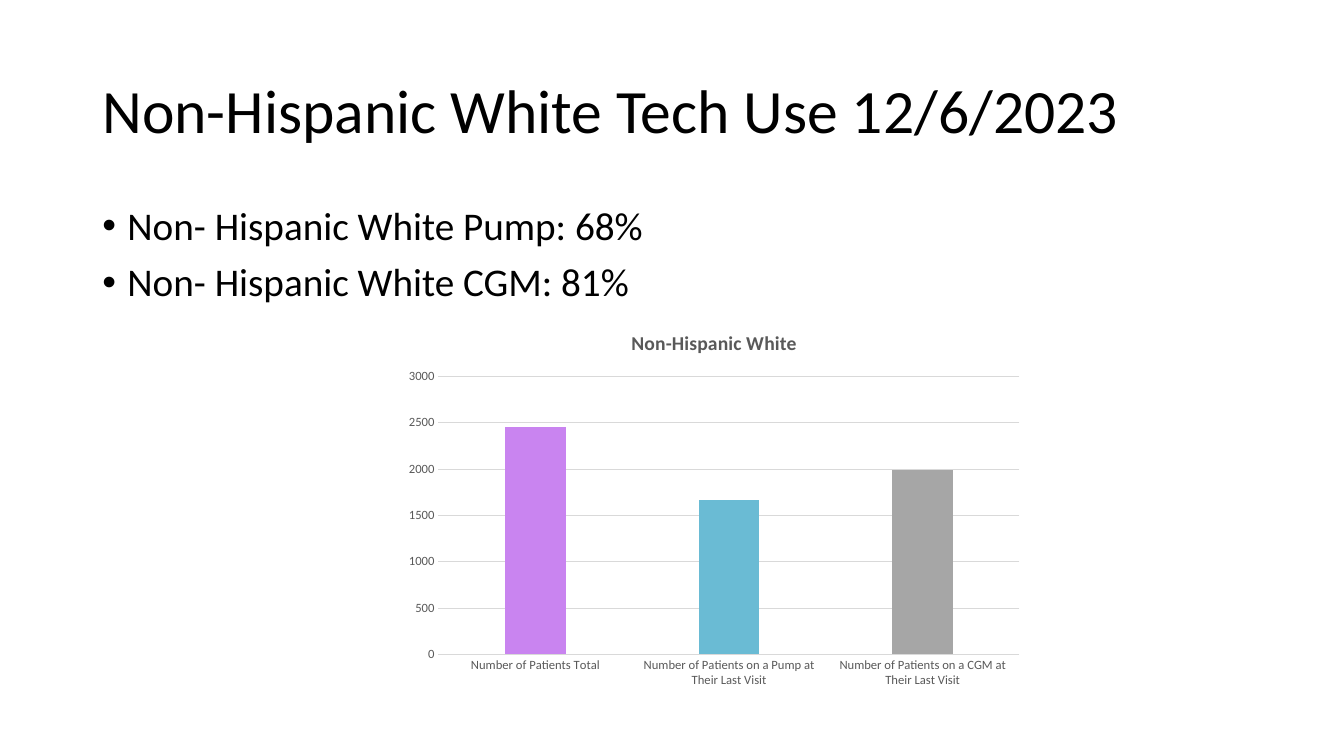
"""Build the slide on Non-Hispanic White tech use."""
from lxml import etree
from pptx import Presentation
from pptx.chart.data import CategoryChartData
from pptx.dml.color import RGBColor
from pptx.enum.chart import XL_CHART_TYPE, XL_TICK_MARK
from pptx.enum.text import MSO_ANCHOR, MSO_AUTO_SIZE, PP_ALIGN
from pptx.oxml.ns import qn
from pptx.util import Pt

COLUMN = XL_CHART_TYPE.COLUMN_CLUSTERED
NO_TICK = XL_TICK_MARK.NONE
MIDDLE = MSO_ANCHOR.MIDDLE
NO_FIT = MSO_AUTO_SIZE.NONE
LEFT = PP_ALIGN.LEFT
FACE = "Calibri"
COLORS = {
    "text": "000000", "label": "595959", "grid": "D9D9D9",
    "total": "C984F0", "pump": "6ABBD4", "cgm": "A6A6A6",
}


def shade(name):
    return RGBColor.from_string(COLORS[name])


def style(font, size, color, bold=False):
    font.name = FACE
    font.size = Pt(size)
    font.bold = bold
    font.color.rgb = shade(color)


deck = Presentation()
deck.slide_width, deck.slide_height = Pt(960), Pt(540)
slide = deck.slides.add_slide(deck.slide_layouts[5])

title = slide.shapes.title
title.left, title.top, title.width, title.height = Pt(66), Pt(28.8), Pt(828), Pt(104.4)
frame = title.text_frame
frame.text = "Non-Hispanic White Tech Use 12/6/2023"
frame.auto_size = NO_FIT
frame.vertical_anchor = MIDDLE
head = frame.paragraphs[0]
head.alignment = LEFT
head.line_spacing = 0.9
style(head.runs[0].font, 44, "text")

body = slide.shapes.add_textbox(Pt(66), Pt(144), Pt(828), Pt(342.7)).text_frame
body.word_wrap = True
body.text = "Non- Hispanic White Pump: 68%\nNon- Hispanic White CGM: 81%"
for para in body.paragraphs:
    para.line_spacing = 0.9
    para.space_before = Pt(10)
    style(para.runs[0].font, 28, "text")
    props = para._p.get_or_add_pPr()
    props.set("marL", str(Pt(18)))
    props.set("indent", str(Pt(-18)))
    etree.SubElement(props, qn("a:buFont")).set("typeface", "Arial")
    etree.SubElement(props, qn("a:buChar")).set("char", "•")

data = CategoryChartData()
data.categories = [
    "Number of Patients Total",
    "Number of Patients on a Pump at Their Last Visit",
    "Number of Patients on a CGM at Their Last Visit",
]
data.add_series("Non-Hispanic White", [2450, 1670, 1990])
chart = slide.shapes.add_chart(
    COLUMN, Pt(283), Pt(223.2), Pt(454.3), Pt(273.6), data).chart
style(chart.font, 10, "text")
chart.has_legend = False
chart.has_title = True
chart.chart_title.include_in_layout = False
label = chart.chart_title.text_frame
label.text = "Non-Hispanic White"
style(label.paragraphs[0].runs[0].font, 14, "label", True)

cats, vals = chart.category_axis, chart.value_axis
for axis in (cats, vals):
    axis.major_tick_mark = axis.minor_tick_mark = NO_TICK
    style(axis.tick_labels.font, 9, "label")
vals.minimum_scale, vals.maximum_scale, vals.major_unit = 0, 3000, 500
vals.has_major_gridlines = True
vals.format.line.fill.background()
for line in (cats.format.line, vals.major_gridlines.format.line):
    line.color.rgb = shade("grid")
    line.width = Pt(0.75)

plot = chart.plots[0]
plot.gap_width, plot.overlap = 219, -27
plot.vary_by_categories = False
bars = plot.series[0]
bars.invert_if_negative = False
bars.format.fill.solid()
bars.format.fill.fore_color.rgb = shade("total")
for spot, name in enumerate(("pump", "cgm"), 1):
    fill = bars.points[spot].format.fill
    fill.solid()
    fill.fore_color.rgb = shade(name)

deck.save("out.pptx")
